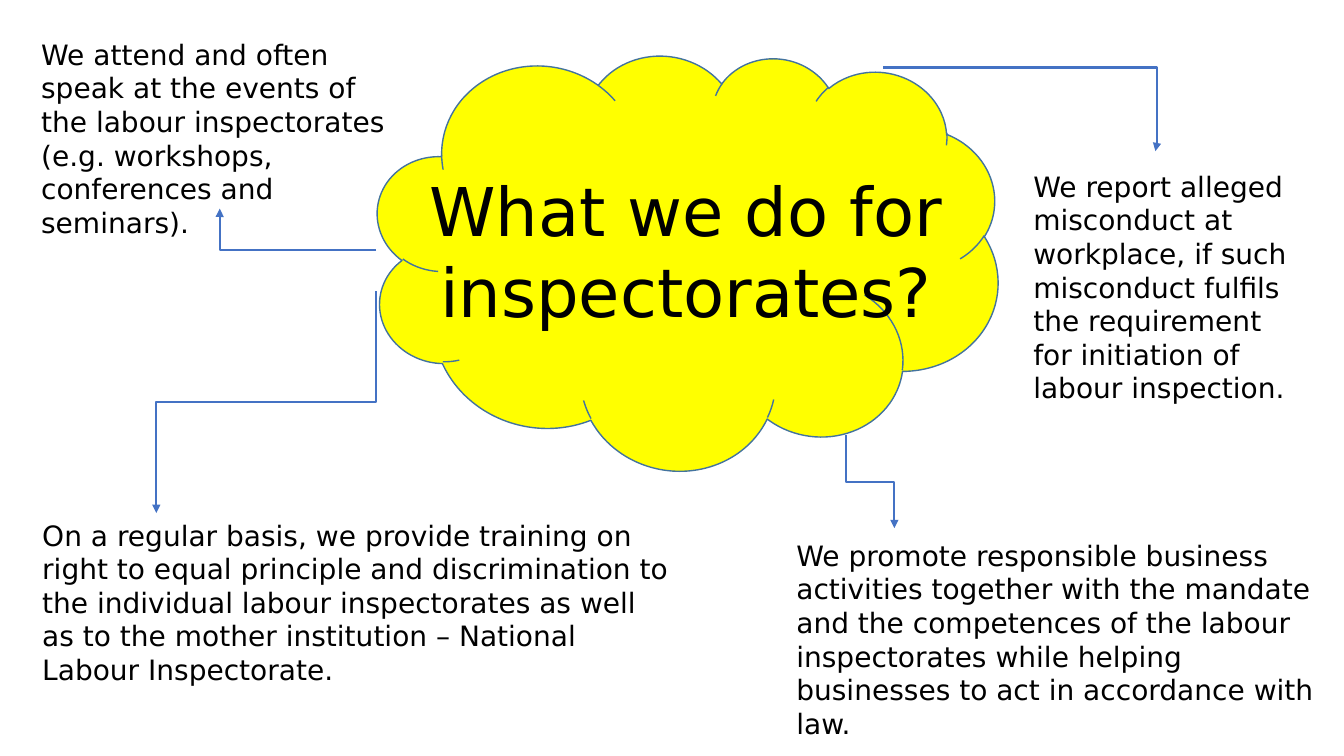
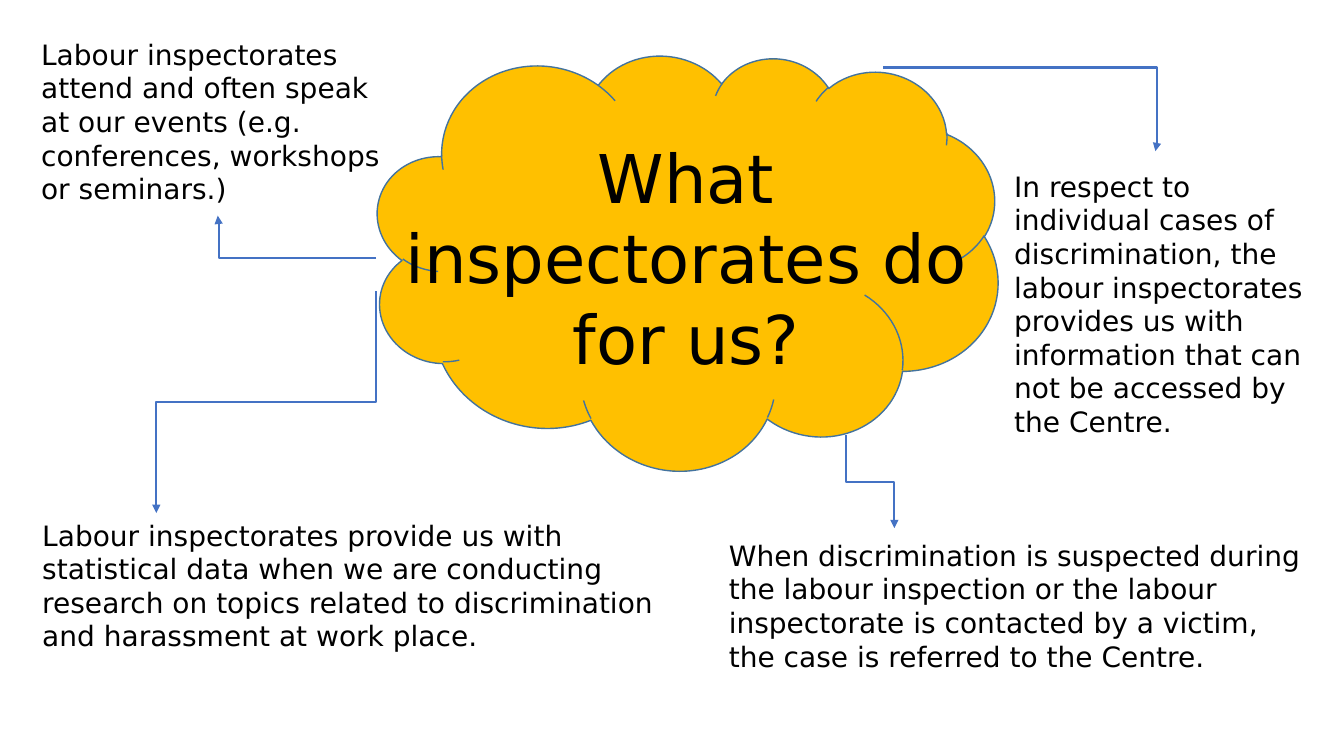
from dataclasses import dataclass

from lxml.etree import SubElement
from pptx import Presentation
from pptx.dml.color import RGBColor
from pptx.enum.shapes import MSO_CONNECTOR as Connector, MSO_SHAPE as Shape
from pptx.enum.text import MSO_AUTO_SIZE as AutoSize, PP_ALIGN as Align
from pptx.oxml.ns import qn
from pptx.util import Inches, Pt


@dataclass(frozen=True)
class Theme:
    font: str = "DejaVu Sans"
    text: str = "000000"
    outline: str = "43739E"
    arrow: str = "4472C4"
    yellow: str = "FFFF00"
    amber: str = "FFC000"
    title_size: int = 48
    body_size: int = 20
    outline_width: float = 1
    arrow_width: float = 1.5


class Board:
    """Holds the deck, its theme and the slide being drawn."""

    def __init__(self, theme):
        self.theme = theme
        self.deck = Presentation()
        self.deck.slide_width, self.deck.slide_height = Inches(13.33), Inches(7.5)
        self.page = None

    def add_page(self):
        self.page = self.deck.slides.add_slide(self.deck.slide_layouts[6])

    def cloud(self, color):
        cloud = self.page.shapes.add_shape(
            Shape.CLOUD, Inches(3.71), Inches(0.47), Inches(6.2), Inches(4.19))
        cloud.rotation = 7.4
        cloud.shadow.inherit = False
        cloud.fill.solid()
        cloud.fill.fore_color.rgb = RGBColor.from_string(color)
        cloud.line.color.rgb = RGBColor.from_string(self.theme.outline)
        cloud.line.width = Pt(self.theme.outline_width)

    def text(self, words, place, size=None, align=Align.LEFT):
        box = self.page.shapes.add_textbox(*map(Inches, place))
        frame = box.text_frame
        frame.word_wrap = True
        frame.auto_size = AutoSize.SHAPE_TO_FIT_TEXT
        para = frame.paragraphs[0]
        para.text = words
        para.alignment = align
        para.font.name = self.theme.font
        para.font.size = Pt(size or self.theme.body_size)
        para.font.color.rgb = RGBColor.from_string(self.theme.text)

    def title(self, words, top, height):
        self.text(words, (3.73, top, 6.15, height), self.theme.title_size, Align.CENTER)

    def elbow(self, start, end, turn=0.5, vertical=False):
        """Bent arrow; turn is the share of the way at which it bends,
        vertical makes it leave upright, which needs a turned frame."""
        (x1, y1), (x2, y2) = start, end
        width, height = abs(x2 - x1), abs(y2 - y1)
        leftward = x2 < x1
        if vertical:
            width, height = height, width
            angle = 90 if leftward else 270
        else:
            angle = 180 if leftward else 0
        left, top = (x1 + x2 - width) / 2, (y1 + y2 - height) / 2
        arrow = self.page.shapes.add_connector(
            Connector.ELBOW, Inches(left), Inches(top),
            Inches(left + width), Inches(top + height))
        arrow.line.color.rgb = RGBColor.from_string(self.theme.arrow)
        arrow.line.width = Pt(self.theme.arrow_width)

        properties = arrow._element.spPr
        frame = properties.find(qn("a:xfrm"))
        frame.set("rot", str(angle * 60000))
        if vertical and not leftward:
            frame.set("flipH", "1")
        guides = properties.find(qn("a:prstGeom")).find(qn("a:avLst"))
        SubElement(guides, qn("a:gd"), name="adj1", fmla=f"val {round(turn * 100000)}")
        SubElement(properties.find(qn("a:ln")), qn("a:tailEnd"), type="triangle")
        SubElement(properties, qn("a:effectLst"))

    def mind_map(self, color, title, notes, upper_left_arrow):
        self.add_page()
        self.cloud(color)
        self.title(*title)
        for words, place in notes:
            self.text(words, place)
        self.elbow((3.73, 2.89), (1.55, 5.09), vertical=True)
        self.elbow((8.39, 4.32), (8.87, 5.24), vertical=True)
        self.elbow((8.76, 0.67), (11.46, 1.5), turn=1.005)
        self.elbow(*upper_left_arrow)


def main():
    theme = Theme()
    board = Board(theme)
    board.mind_map(
        theme.yellow,
        ("What we do for inspectorates?", 1.63, 1.72),
        [
            ("On a regular basis, we provide training on right to equal principle and "
             "discrimination to the individual labour inspectorates as well as to the "
             "mother institution – National Labour Inspectorate.",
             (0.32, 5.09, 6.49, 1.78)),
            ("We promote responsible business activities together with the mandate and "
             "the competences of the labour inspectorates while helping businesses to "
             "act in accordance with law.",
             (7.8, 5.29, 5.4, 2.12)),
            ("We report alleged misconduct at workplace, if such misconduct fulfils the "
             "requirement for initiation of labour inspection.",
             (10.15, 1.63, 2.87, 2.46)),
            ("We attend and often speak at the events of the labour inspectorates "
             "(e.g. workshops, conferences and seminars).",
             (0.31, 0.32, 3.74, 2.12)),
        ],
        ((3.73, 2.48), (2.18, 2.07), 1.001),
    )
    board.mind_map(
        theme.amber,
        ("What inspectorates do for us?", 1.3, 2.52),
        [
            ("Labour inspectorates provide us with statistical data when we are "
             "conducting research on topics related to discrimination and harassment "
             "at work place.",
             (0.32, 5.09, 6.49, 1.45)),
            ("When discrimination is suspected during the labour inspection or the "
             "labour inspectorate is contacted by a victim, the case is referred to "
             "the Centre.",
             (7.13, 5.29, 5.88, 1.45)),
            ("In respect to individual cases of discrimination, the labour "
             "inspectorates provides us with information that can not be accessed by "
             "the Centre.",
             (9.96, 1.63, 3.22, 2.79)),
            ("Labour inspectorates attend and often speak at our events (e.g. "
             "conferences, workshops or seminars.)",
             (0.31, 0.32, 3.74, 1.78)),
        ],
        ((3.73, 2.56), (2.16, 2.14), 0.995),
    )
    board.deck.save("out.pptx")


if __name__ == "__main__":
    main()
